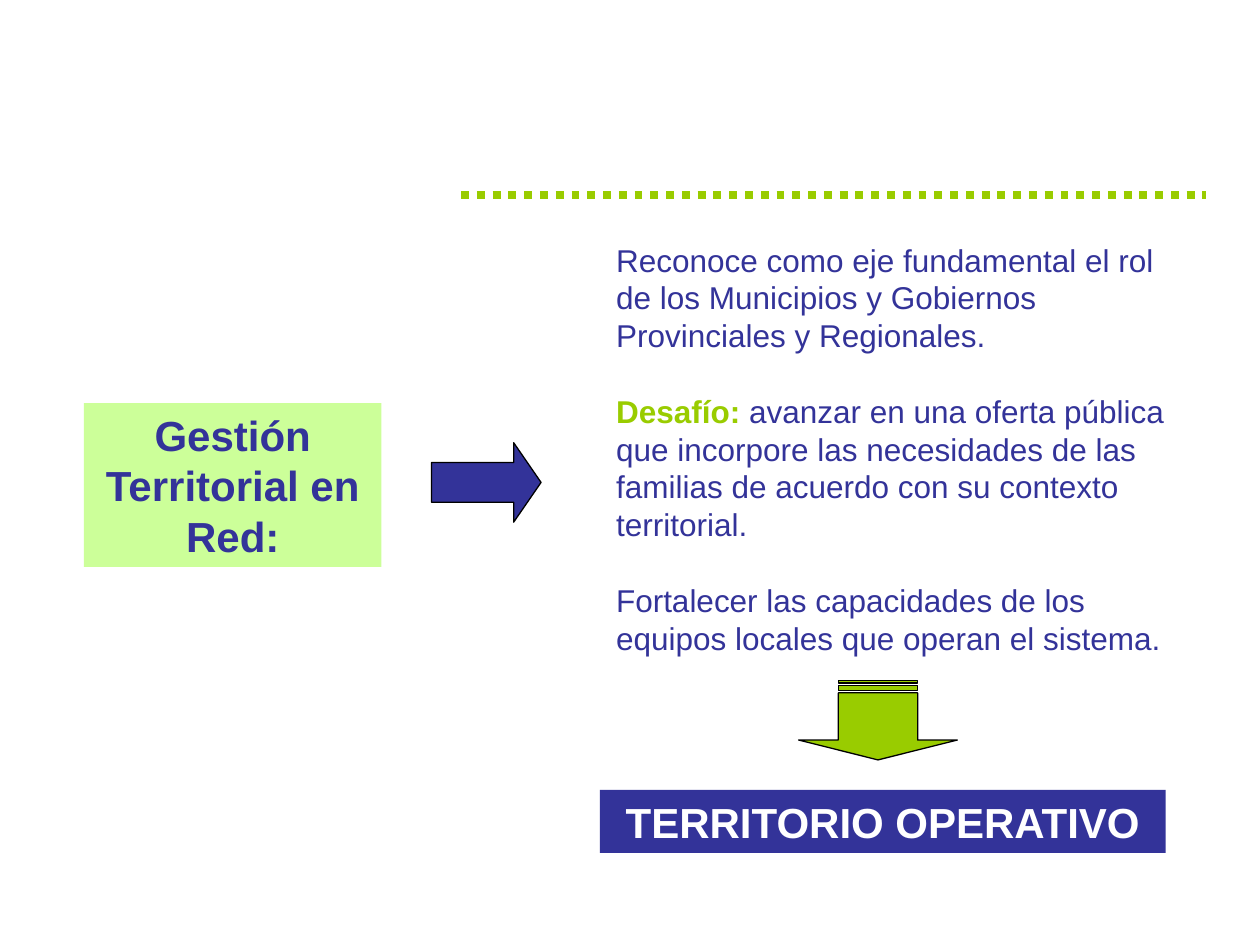
from dataclasses import dataclass

from pptx import Presentation
from pptx.dml.color import RGBColor
from pptx.enum.dml import MSO_LINE
from pptx.enum.shapes import MSO_CONNECTOR, MSO_SHAPE
from pptx.enum.text import MSO_ANCHOR, PP_ALIGN
from pptx.oxml.ns import qn
from pptx.slide import Slide
from pptx.util import Pt


@dataclass(frozen=True)
class Theme:
    font: str = "Arial"
    navy: str = "333399"
    green: str = "99CC00"
    pale_green: str = "CCFF99"
    white: str = "FFFFFF"
    black: str = "000000"
    heading_size: float = 24
    body_size: float = 18
    line_factor: float = 1.2


THEME = Theme()


@dataclass(frozen=True)
class Frame:
    left: float
    top: float
    width: float
    height: float

    def lengths(self) -> tuple:
        return Pt(self.left), Pt(self.top), Pt(self.width), Pt(self.height)


@dataclass(frozen=True)
class Label:
    text: str
    frame: Frame
    fill: str
    color: str


@dataclass(frozen=True)
class Arrow:
    kind: MSO_SHAPE
    frame: Frame
    fill: str
    head: float
    rotation: float = 0


@dataclass(frozen=True)
class TextRun:
    text: str
    color: str = THEME.navy
    bold: bool = False


LABELS = [
    Label("Gestión Territorial en Red:", Frame(48, 230.4, 170, 93.6),
          THEME.pale_green, THEME.navy),
    Label("TERRITORIO OPERATIVO", Frame(342.8, 451.4, 323.3, 36),
          THEME.navy, THEME.white),
]

ARROWS = [
    Arrow(MSO_SHAPE.RIGHT_ARROW, Frame(246.6, 253, 62.6, 45.4), THEME.navy, 0.344),
    Arrow(MSO_SHAPE.STRIPED_RIGHT_ARROW, Frame(479, 366.2, 45.4, 90.7),
          THEME.green, 0.25, 90),
]

BODY_FRAME = Frame(309, 134, 380, 250)
BODY = [
    [TextRun("Reconoce como eje fundamental el rol de los Municipios y Gobiernos "
             "Provinciales y Regionales.")],
    [TextRun("Desafío:", THEME.green, True),
     TextRun(" avanzar en una oferta pública que incorpore las necesidades de las "
             "familias de acuerdo con su contexto territorial.")],
    [TextRun("Fortalecer las capacidades de los equipos locales que operan el sistema.")],
]


def add_run(paragraph, text_run: TextRun, size: float) -> None:
    run = paragraph.add_run()
    run.text = text_run.text
    run.font.name = THEME.font
    run.font.size = Pt(size)
    run.font.bold = text_run.bold
    run.font.color.rgb = RGBColor.from_string(text_run.color)
    paragraph.line_spacing = Pt(size * THEME.line_factor)


def add_filled_shape(slide: Slide, kind: MSO_SHAPE, frame: Frame, fill: str):
    shape = slide.shapes.add_shape(kind, *frame.lengths())
    shape.shadow.inherit = False
    shape.fill.solid()
    shape.fill.fore_color.rgb = RGBColor.from_string(fill)
    return shape


def add_label(slide: Slide, label: Label) -> None:
    shape = add_filled_shape(slide, MSO_SHAPE.RECTANGLE, label.frame, label.fill)
    shape.line.fill.background()
    shape.text_frame.word_wrap = True
    shape.text_frame.vertical_anchor = MSO_ANCHOR.TOP
    paragraph = shape.text_frame.paragraphs[0]
    paragraph.alignment = PP_ALIGN.CENTER
    add_run(paragraph, TextRun(label.text, label.color, True), THEME.heading_size)


def add_arrow(slide: Slide, arrow: Arrow) -> None:
    shape = add_filled_shape(slide, arrow.kind, arrow.frame, arrow.fill)
    shape.adjustments[0] = 0.5
    shape.adjustments[1] = arrow.head
    shape.rotation = arrow.rotation
    shape.line.color.rgb = RGBColor.from_string(THEME.black)
    shape.line.width = Pt(0.75)


def add_body(slide: Slide) -> None:
    text_frame = slide.shapes.add_textbox(*BODY_FRAME.lengths()).text_frame
    text_frame.word_wrap = True
    for index, text_runs in enumerate(BODY):
        paragraph = text_frame.add_paragraph() if index else text_frame.paragraphs[0]
        properties = paragraph._p.get_or_add_pPr()
        properties.set("marL", str(Pt(36)))
        properties.set("indent", "0")
        if index:
            paragraph.space_before = Pt(THEME.body_size * THEME.line_factor)
        for text_run in text_runs:
            add_run(paragraph, text_run, THEME.body_size)


def add_dotted_rule(slide: Slide) -> None:
    rule = slide.shapes.add_connector(
        MSO_CONNECTOR.STRAIGHT, Pt(263.5), Pt(111.4), Pt(689), Pt(111.4))
    rule.line.color.rgb = RGBColor.from_string(THEME.green)
    rule.line.width = Pt(4.5)
    rule.line.dash_style = MSO_LINE.ROUND_DOT
    properties = rule._element.spPr
    properties.append(properties.makeelement(qn("a:effectLst"), {}))


def main() -> None:
    presentation = Presentation()
    presentation.slide_width = Pt(720)
    presentation.slide_height = Pt(540)
    slide = presentation.slides.add_slide(presentation.slide_layouts[6])
    add_body(slide)
    add_dotted_rule(slide)
    for label in LABELS:
        add_label(slide, label)
    for arrow in ARROWS:
        add_arrow(slide, arrow)
    presentation.save("out.pptx")


if __name__ == "__main__":
    main()
